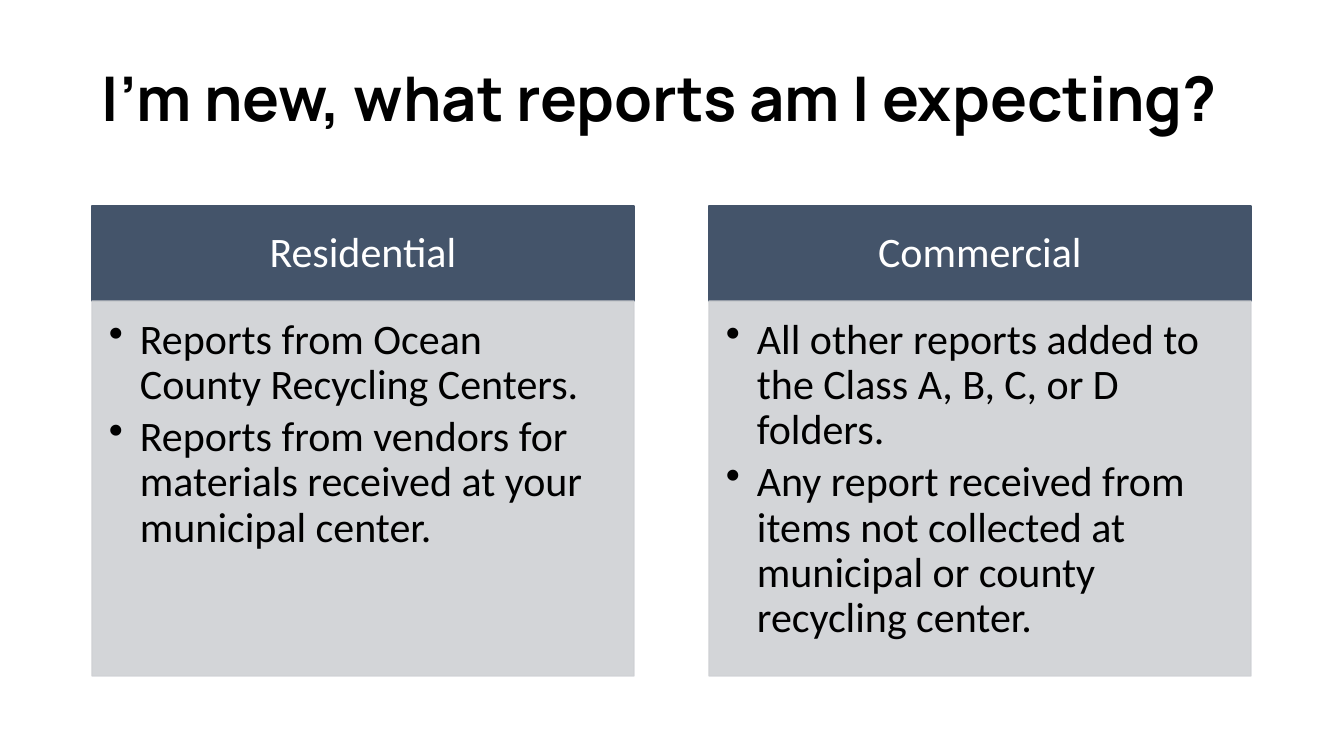
from pptx import Presentation, util as u
from pptx.dml.color import RGBColor
from pptx.enum import shapes, text as t
from pptx.oxml.ns import qn
from lxml import etree

TITLE = "I’m new, what reports am I expecting?"
COLUMNS = [
    ("Residential", [
        "Reports from Ocean County Recycling Centers.",
        "Reports from vendors for materials received at your municipal center.",
    ]),
    ("Commercial", [
        "All other reports added to the Class A, B, C, or D folders.",
        "Any report received from items not collected at municipal or county recycling center.",
    ]),
]
COLORS = {"heading": "44546A", "body": "CFD1D4", "white": "FFFFFF", "black": "000000"}

SLIDE_W, SLIDE_H = 1344, 756
LEFT, COLUMN_W, COLUMN_GAP = 92, 542, 75
HEADING_TOP, HEADING_H, BODY_H = 206, 95, 375
HANGING = 31


def px(n):
    return u.Emu(round(n * 914400 / 100.8))


def rgb(name):
    return RGBColor.from_string(COLORS[name])


def write(shape, lines, size=30, font="Calibri", color="black", bold=False,
          align=t.PP_ALIGN.LEFT, anchor=t.MSO_ANCHOR.MIDDLE,
          insets=(10, 5, 10, 5), after=0, bullet=False):
    """Fill a shape with paragraphs; insets are left, top, right, bottom in px."""
    frame = shape.text_frame
    frame.word_wrap = True
    frame.vertical_anchor = anchor
    (frame.margin_left, frame.margin_top,
     frame.margin_right, frame.margin_bottom) = map(px, insets)
    for i, line in enumerate(lines):
        paragraph = frame.add_paragraph() if i else frame.paragraphs[0]
        paragraph.alignment = align
        paragraph.line_spacing = 0.9
        paragraph.space_before = u.Pt(0)
        paragraph.space_after = u.Pt(after)
        run = paragraph.add_run()
        run.text = line
        run.font.size = u.Pt(size)
        run.font.name = font
        run.font.bold = bold
        run.font.color.rgb = rgb(color)
        if bullet:
            paragraph.level = 1
            props = paragraph._p.get_or_add_pPr()
            props.set("marL", str(px(HANGING)))
            props.set("indent", str(-px(HANGING)))
            etree.SubElement(props, qn("a:buChar")).set("char", "•")


def add_panel(slide, box, color, opacity=100):
    panel = slide.shapes.add_shape(shapes.MSO_SHAPE.RECTANGLE, *map(px, box))
    panel.shadow.inherit = False
    panel.line.width = u.Pt(1)
    for fill in (panel.fill, panel.line.fill):
        fill.solid()
        fill.fore_color.rgb = rgb(color)
    if opacity < 100:
        for tint in panel._element.spPr.iter(qn("a:srgbClr")):
            etree.SubElement(tint, qn("a:alpha")).set("val", str(opacity * 1000))
    return panel


def main():
    deck = Presentation()
    deck.slide_width, deck.slide_height = px(SLIDE_W), px(SLIDE_H)
    slide = deck.slides.add_slide(deck.slide_layouts[6])

    for i, (heading, reports) in enumerate(COLUMNS):
        left = LEFT + i * (COLUMN_W + COLUMN_GAP)
        write(add_panel(slide, (left, HEADING_TOP, COLUMN_W, HEADING_H), "heading"),
              [heading], color="white", align=t.PP_ALIGN.CENTER,
              insets=(23, 13, 23, 13))
        body_box = (left, HEADING_TOP + HEADING_H, COLUMN_W, BODY_H)
        write(add_panel(slide, body_box, "body", opacity=90), reports,
              anchor=t.MSO_ANCHOR.TOP, insets=(17, 17, 23, 26), after=4.5, bullet=True)

    title_w = 2 * COLUMN_W + COLUMN_GAP
    title = slide.shapes.add_textbox(*map(px, (LEFT, 29, title_w, 146)))
    write(title, [TITLE], size=44, font="Manrope", bold=True)

    deck.save("out.pptx")


if __name__ == "__main__":
    main()
